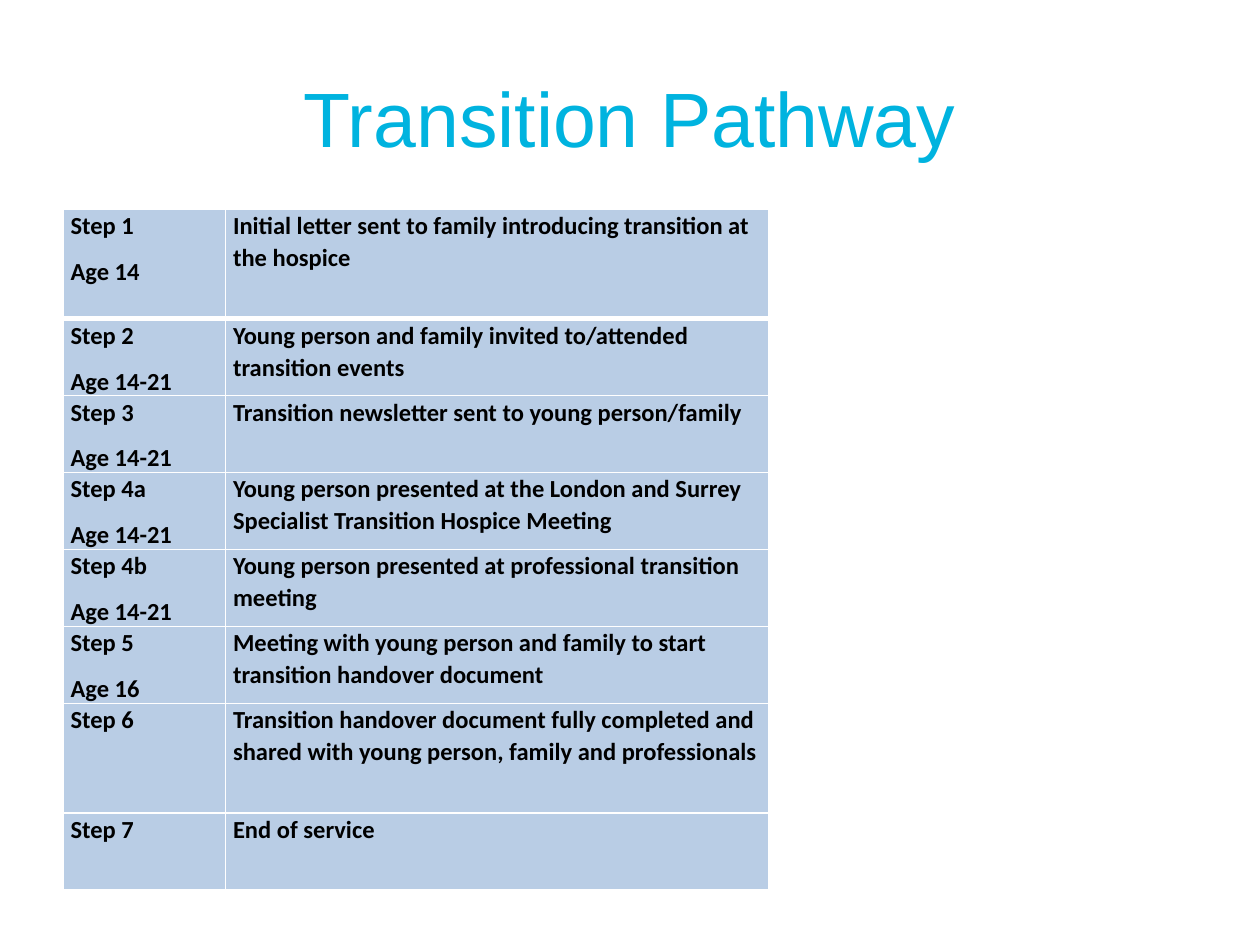
from lxml import etree
from pptx import Presentation
from pptx import util as u
from pptx.dml.color import RGBColor
from pptx.enum import text
from pptx.oxml import ns

WIDTH, HEIGHT = 10, 7.5
MARGIN = WIDTH * 0.05
COLUMNS = (1.29, 4.31)
TALL, SHORT = 0.87, 0.61
STEPS = [
    (TALL, ["Step 1", "Age 14"],
     "Initial letter sent to family introducing transition at the hospice"),
    (SHORT, ["Step 2", "Age 14-21"],
     "Young person and family invited to/attended transition events"),
    (SHORT, ["Step 3", "Age 14-21"],
     "Transition newsletter sent to young person/family"),
    (SHORT, ["Step 4a", "Age 14-21"],
     "Young person presented at the London and Surrey Specialist Transition Hospice Meeting"),
    (SHORT, ["Step 4b", "Age 14-21"],
     "Young person presented at professional transition meeting"),
    (SHORT, ["Step 5", "Age 16"],
     "Meeting with young person and family to start transition handover document"),
    (TALL, ["Step 6"],
     "Transition handover document fully completed and shared with young person, family and professionals"),
    (SHORT, ["Step 7"], "End of service"),
]


def color(value):
    return RGBColor.from_string(value)


def set_font(p, name, size, value, bold=False):
    p.font.name = name
    p.font.size = u.Pt(size)
    p.font.bold = bold
    p.font.color.rgb = color(value)


def add_title(s, words):
    box = s.shapes.add_textbox(u.Inches(MARGIN), u.Inches(HEIGHT * 0.04),
                               u.Inches(WIDTH - 2 * MARGIN), u.Inches(1.25))
    tf = box.text_frame
    tf.word_wrap = True
    tf.vertical_anchor = text.MSO_ANCHOR.MIDDLE
    p = tf.paragraphs[0]
    p.text = words
    p.alignment = text.PP_ALIGN.CENTER
    set_font(p, "Arial", 44, "00B3DF")


def set_borders(cell, value, top, bottom):
    props = cell._tc.get_or_add_tcPr()
    widths = {"lnL": 1, "lnR": 1, "lnT": top, "lnB": bottom}
    for i, (side, width) in enumerate(widths.items()):
        line = etree.Element(ns.qn(f"a:{side}"), w=str(u.Pt(width)))
        fill = etree.SubElement(line, ns.qn("a:solidFill"))
        etree.SubElement(fill, ns.qn("a:srgbClr"), val=value)
        props.insert(i, line)


def fill_cell(cell, lines, top, bottom):
    cell.margin_left = cell.margin_right = u.Inches(0.06)
    cell.margin_top = cell.margin_bottom = 0
    cell.fill.solid()
    cell.fill.fore_color.rgb = color("B9CDE5")
    set_borders(cell, "FFFFFF", top, bottom)
    cell.text_frame.text = "\n".join(lines)
    for p in cell.text_frame.paragraphs:
        p.line_spacing = 1.07
        p.space_after = u.Pt(8)
        set_font(p, "Calibri", 14, "000000", True)


def add_steps(s, steps):
    height = sum(step[0] for step in steps)
    table = s.shapes.add_table(len(steps), len(COLUMNS), u.Inches(MARGIN), u.Inches(1.66),
                               u.Inches(sum(COLUMNS)), u.Inches(height)).table
    for column, width in zip(table.columns, COLUMNS):
        column.width = u.Inches(width)
    for i, (row_height, label, action) in enumerate(steps):
        table.rows[i].height = u.Inches(row_height)
        top = 3 if i == 1 else 1
        bottom = 3 if i == 0 else 1
        for j, lines in enumerate((label, [action])):
            fill_cell(table.cell(i, j), lines, top, bottom)


def main():
    prs = Presentation()
    prs.slide_width, prs.slide_height = u.Inches(WIDTH), u.Inches(HEIGHT)
    s = prs.slides.add_slide(prs.slide_layouts[6])
    add_title(s, "Transition Pathway")
    add_steps(s, STEPS)
    prs.save("out.pptx")


if __name__ == "__main__":
    main()
